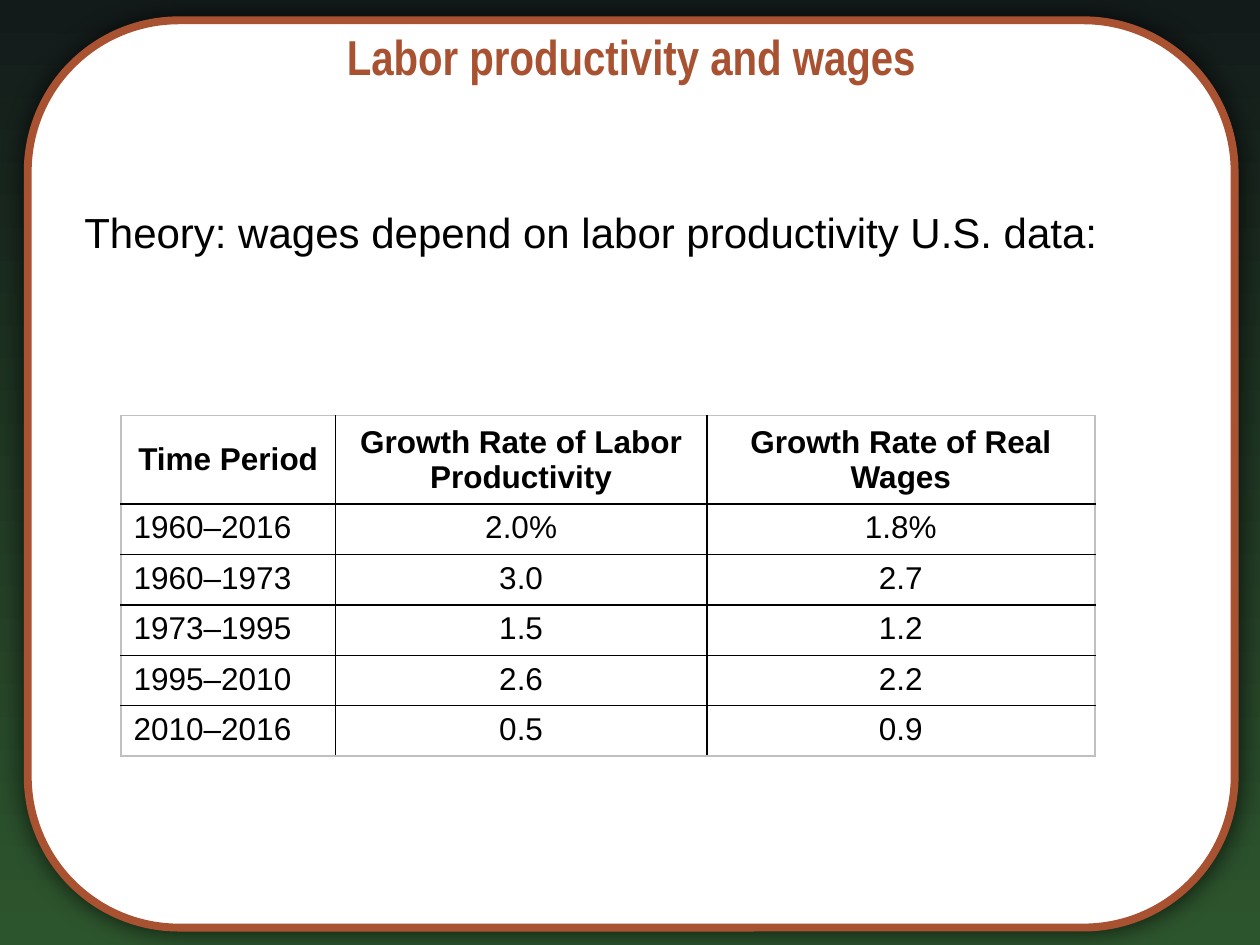
from dataclasses import dataclass

from lxml.etree import SubElement
from pptx import Presentation
from pptx.dml.color import RGBColor
from pptx.enum.shapes import MSO_SHAPE
from pptx.enum.text import MSO_ANCHOR, PP_ALIGN
from pptx.oxml import parse_xml
from pptx.oxml.ns import nsdecls, qn
from pptx.slide import Slide
from pptx.util import Cm, Pt

COLOURS = {
    "night": "131B1A",
    "forest": "2D552D",
    "rust": "A85232",
    "paper": "FFFFFF",
    "ink": "000000",
    "edge": "C0C0C0",
}
HEADINGS = ["Time Period", "Growth Rate of Labor Productivity", "Growth Rate of Real Wages"]
GROWTH_RATES = [
    ["1960–2016", "2.0%", "1.8%"],
    ["1960–1973", "3.0", "2.7"],
    ["1973–1995", "1.5", "1.2"],
    ["1995–2010", "2.6", "2.2"],
    ["2010–2016", "0.5", "0.9"],
]


def colour(name):
    """Return the named colour."""
    return RGBColor.from_string(COLOURS[name])


@dataclass
class SlideBuilder:
    """Hold the current slide and its text style, and add elements to it."""

    page: Slide
    font: str = "Arial"

    def background(self, top, bottom):
        """Fill the page with a vertical gradient."""
        fill = self.page.background.fill
        fill.gradient()
        fill.gradient_angle = 270
        for stop, name, position in zip(fill.gradient_stops, (top, bottom), (0, 1)):
            stop.color.rgb = colour(name)
            stop.position = position

    def panel(self, left, top, width, height):
        """Add the rounded panel with its soft shadow."""
        shape = self.page.shapes.add_shape(
            MSO_SHAPE.ROUNDED_RECTANGLE, Cm(left), Cm(top), Cm(width), Cm(height)
        )
        shape.fill.solid()
        shape.fill.fore_color.rgb = colour("paper")
        shape.line.color.rgb = colour("rust")
        shape.line.width = Pt(4.5)
        shape.shadow.inherit = False
        effects = shape.element.spPr.find(qn("a:effectLst"))
        effects.append(parse_xml(
            f'<a:outerShdw {nsdecls("a")} blurRad="{Pt(14)}" dist="0" rotWithShape="0">'
            f'<a:srgbClr val="{COLOURS["ink"]}"><a:alpha val="70000"/></a:srgbClr></a:outerShdw>'
        ))

    def add_span(self, para, words, size, name="ink", bold=False, font=None):
        """Add one styled run to a paragraph."""
        span = para.add_run()
        span.text = words
        span.font.name = font or self.font
        span.font.size = Pt(size)
        span.font.bold = bold
        span.font.color.rgb = colour(name)

    def text(self, left, top, width, height, words, size, align=PP_ALIGN.LEFT, before=0, **style):
        """Add a wrapping text box with one paragraph."""
        box = self.page.shapes.add_textbox(Cm(left), Cm(top), Cm(width), Cm(height))
        box.text_frame.word_wrap = True
        para = box.text_frame.paragraphs[0]
        para.alignment = align
        para.space_before = Pt(before)
        self.add_span(para, words, size, **style)

    def border(self, cell, sides):
        """Draw a cell's borders from a dict of side and colour name."""
        properties = cell._tc.get_or_add_tcPr()
        for index, (side, name) in enumerate(sides.items()):
            line = parse_xml(f'<a:ln{side} {nsdecls("a")} w="{Pt(1)}"/>')
            fill = SubElement(line, qn("a:solidFill"))
            SubElement(fill, qn("a:srgbClr"), val=COLOURS[name])
            properties.insert(index, line)

    def table(self, left, top, widths, heights, rows, size):
        """Add a ruled table with a bold heading row."""
        table = self.page.shapes.add_table(
            len(rows), len(widths), Cm(left), Cm(top), Cm(sum(widths)), Cm(sum(heights))
        ).table
        table.first_row = table.horz_banding = False
        for column, width in zip(table.columns, widths):
            column.width = Cm(width)
        for row, height in zip(table.rows, heights):
            row.height = Cm(height)
        last_row, last_column = len(rows) - 1, len(widths) - 1
        for r, row in enumerate(rows):
            for c, words in enumerate(row):
                cell = table.cell(r, c)
                cell.fill.background()
                heading = r == 0
                cell.vertical_anchor = MSO_ANCHOR.MIDDLE if heading else MSO_ANCHOR.TOP
                para = cell.text_frame.paragraphs[0]
                para.alignment = PP_ALIGN.CENTER if heading or c else PP_ALIGN.LEFT
                self.add_span(para, words, size, bold=heading)
                outer = {"L": c == 0, "R": c == last_column, "T": heading, "B": r == last_row}
                self.border(cell, {side: "edge" if out else "ink" for side, out in outer.items()})


def main():
    """Build the labor productivity slide."""
    deck = Presentation()
    deck.slide_width, deck.slide_height = Cm(25.4), Cm(19.05)
    builder = SlideBuilder(deck.slides.add_slide(deck.slide_layouts[6]))
    builder.background("night", "forest")
    builder.panel(0.56, 0.41, 24.33, 18.29)
    builder.text(1.42, 0.41, 22.61, 2.11, "Labor productivity and wages", 28,
                 align=PP_ALIGN.CENTER, name="rust", bold=True, font="Arial Narrow")
    builder.text(1.45, 4.04, 22.68, 2.59,
                 "Theory: wages depend on labor productivity U.S. data:", 24, before=4.8)
    heights = [1.67] + [0.97] * len(GROWTH_RATES)
    builder.table(2.44, 8.38, [4.32, 7.49, 7.82], heights, [HEADINGS] + GROWTH_RATES, 18)
    deck.save("out.pptx")


if __name__ == "__main__":
    main()
